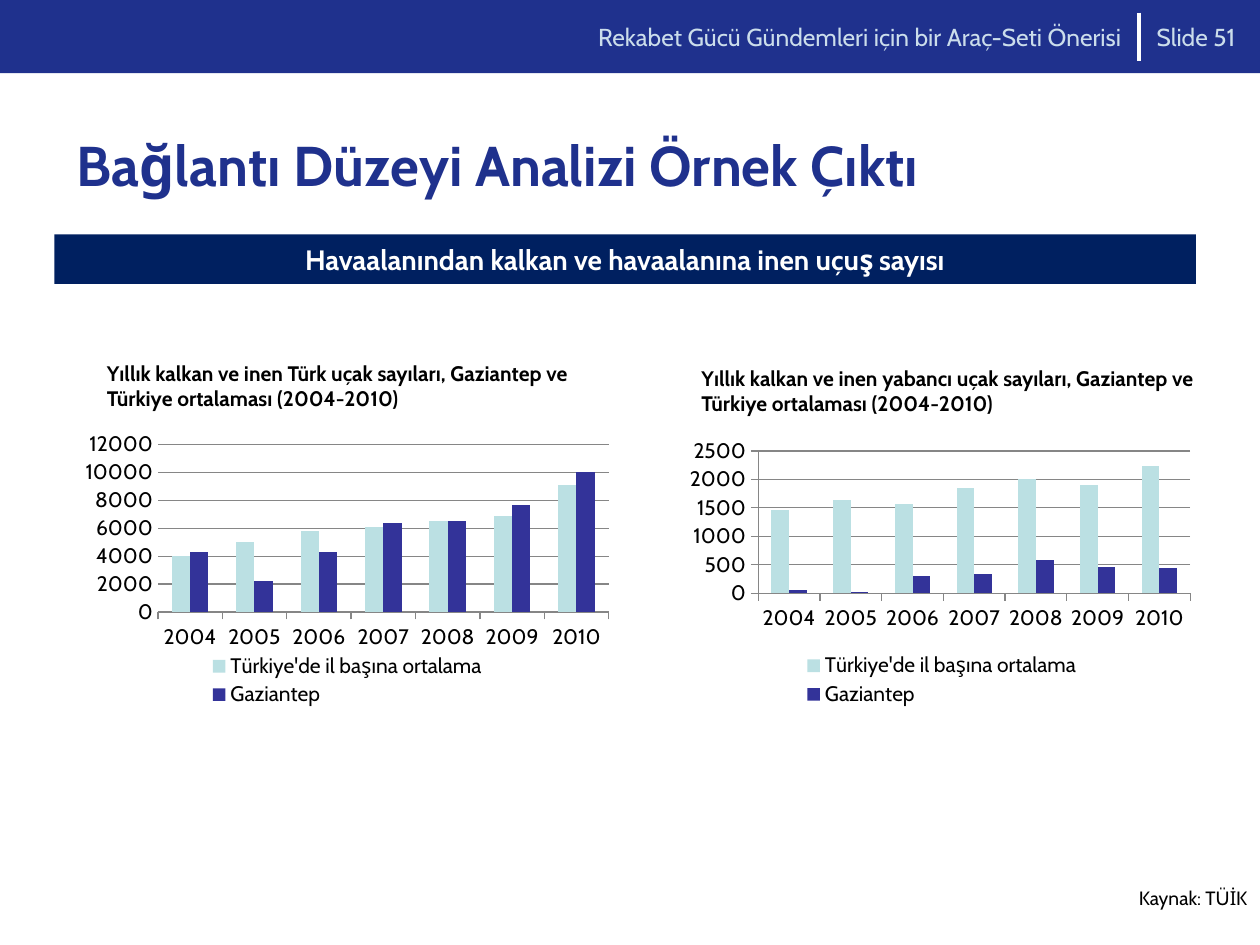
from dataclasses import dataclass

from lxml import etree
from pptx import Presentation
from pptx.chart.data import CategoryChartData
from pptx.dml.color import RGBColor
from pptx.enum.chart import XL_CHART_TYPE, XL_LEGEND_POSITION, XL_TICK_MARK
from pptx.enum.shapes import MSO_CONNECTOR, MSO_SHAPE
from pptx.enum.text import MSO_ANCHOR, MSO_AUTO_SIZE, PP_ALIGN
from pptx.oxml import parse_xml
from pptx.oxml.ns import nsdecls, qn
from pptx.util import Pt

COLUMNS = XL_CHART_TYPE.COLUMN_CLUSTERED
BOTTOM = XL_LEGEND_POSITION.BOTTOM
TICK_NONE, TICK_OUTSIDE = XL_TICK_MARK.NONE, XL_TICK_MARK.OUTSIDE
LEFT, CENTER, RIGHT = PP_ALIGN.LEFT, PP_ALIGN.CENTER, PP_ALIGN.RIGHT
TOP, MIDDLE = MSO_ANCHOR.TOP, MSO_ANCHOR.MIDDLE

FONT = "Cabin"
COLORS = {
    "blue": "1F318D",
    "navy": "002060",
    "pale": "CBDDEB",
    "white": "FFFFFF",
    "black": "000000",
    "grid": "868686",
    "average": "BBE0E3",
    "city": "333399",
}
YEARS = [str(year) for year in range(2004, 2011)]
SERIES = {"Türkiye'de il başına ortalama": "average", "Gaziantep": "city"}

Box = tuple[float, float, float, float]


@dataclass
class Label:
    text: str
    box: Box
    size: float
    color: str = "black"
    bold: bool = False
    align: PP_ALIGN = LEFT
    anchor: MSO_ANCHOR = TOP


@dataclass
class FlightChart:
    box: Box
    plot: Box
    legend: Box
    maximum: int
    step: int
    values: tuple[list[int], list[int]]
    value_line: bool


LABELS = [
    Label("Rekabet Gücü Gündemleri için bir Araç-Seti Önerisi", (149.8, 0, 498.2, 42),
          14, "pale", align=RIGHT, anchor=MIDDLE),
    Label("Slide 51", (653.8, 0, 66.2, 42), 14, "pale", anchor=MIDDLE),
    Label("Bağlantı Düzeyi Analizi Örnek Çıktı", (36.7, 60.5, 671.8, 66.2),
          32, "blue", bold=True, anchor=MIDDLE),
    Label("Yıllık kalkan ve inen Türk uçak sayıları, Gaziantep ve Türkiye ortalaması (2004-2010)",
          (54, 202.3, 289.4, 36), 12, bold=True),
    Label("Yıllık kalkan ve inen yabancı uçak sayıları, Gaziantep ve Türkiye ortalaması (2004-2010)",
          (393.8, 205.5, 311.8, 36), 12, bold=True),
    Label("Kaynak: TÜİK", (371.5, 502.6, 348.5, 20.9), 11, align=RIGHT),
]
BAND = Label("Havaalanından kalkan ve havaalanına inen uçuş sayısı",
             (31, 134, 652.3, 28.3), 16, "white", True, CENTER, MIDDLE)

# Plot and legend boxes are fractions of the chart box
CHARTS = [
    FlightChart((42.5, 241.9, 306, 164.2), (0.156, 0.074, 0.842, 0.583),
                (0.24, 0.79, 0.54, 0.21), 12000, 2000,
                ([4000, 5000, 5800, 6100, 6500, 6900, 9100],
                 [4300, 2200, 4300, 6400, 6500, 7700, 10000]), False),
    FlightChart((388.1, 247.7, 297.4, 158.4), (0.152, 0.063, 0.83, 0.514),
                (0.235, 0.78, 0.54, 0.22), 2500, 500,
                ([1460, 1630, 1570, 1840, 2010, 1900, 2230],
                 [60, 20, 300, 330, 580, 470, 450]), True),
]


def rgb(name: str) -> RGBColor:
    return RGBColor.from_string(COLORS[name])


def points(box: Box) -> list[Pt]:
    return [Pt(length) for length in box]


def write_label(shape, label: Label) -> None:
    frame = shape.text_frame
    frame.text = label.text
    frame.word_wrap = True
    frame.auto_size = MSO_AUTO_SIZE.NONE
    frame.vertical_anchor = label.anchor
    paragraph = frame.paragraphs[0]
    paragraph.alignment = label.align
    font = paragraph.runs[0].font
    font.name, font.size, font.bold = FONT, Pt(label.size), label.bold
    font.color.rgb = rgb(label.color)


def manual_layout(box: Box, inner: bool = False):
    target = '<c:layoutTarget val="inner"/>' if inner else ""
    modes = "".join(f'<c:{axis}Mode val="edge"/>' for axis in "xy")
    sizes = "".join(f'<c:{side} val="{value}"/>' for side, value in zip("xywh", box))
    return parse_xml(f'<c:layout {nsdecls("c")}><c:manualLayout>{target}{modes}{sizes}'
                     "</c:manualLayout></c:layout>")


def gray_line(line) -> None:
    line.color.rgb = rgb("grid")
    line.width = Pt(0.75)


def add_flight_chart(slide, flight: FlightChart) -> None:
    data = CategoryChartData(number_format="General")
    data.categories = YEARS
    for name, values in zip(SERIES, flight.values):
        data.add_series(name, values)
    chart = slide.shapes.add_chart(COLUMNS, *points(flight.box), data).chart
    chart.has_title = False
    chart.font.name, chart.font.size = FONT, Pt(12)
    chart.font.color.rgb = rgb("black")

    # Columns
    plot = chart.plots[0]
    plot.gap_width, plot.overlap, plot.vary_by_categories = 150, 0, False
    for series, color in zip(plot.series, SERIES.values()):
        series.format.fill.solid()
        series.format.fill.fore_color.rgb = rgb(color)

    # Axes
    category_axis, value_axis = chart.category_axis, chart.value_axis
    category_axis.major_tick_mark = TICK_OUTSIDE
    gray_line(category_axis.format.line)
    value_axis.minimum_scale, value_axis.maximum_scale = 0, flight.maximum
    value_axis.major_unit = flight.step
    value_axis.has_major_gridlines = True
    gray_line(value_axis.major_gridlines.format.line)
    if flight.value_line:
        value_axis.major_tick_mark = TICK_OUTSIDE
        gray_line(value_axis.format.line)
    else:
        value_axis.major_tick_mark = TICK_NONE
        value_axis.format.line.fill.background()

    # Legend and fixed layout
    chart.has_legend = True
    legend = chart.legend
    legend.position, legend.include_in_layout = BOTTOM, False
    plot_area = chart.element.find(".//" + qn("c:plotArea"))
    legend_element = chart.element.find(".//" + qn("c:legend"))
    for parent in (plot_area, legend_element):
        for layout in parent.findall(qn("c:layout")):
            parent.remove(layout)
    plot_area.insert(0, manual_layout(flight.plot, inner=True))
    legend_element.find(qn("c:legendPos")).addnext(manual_layout(flight.legend))


def main() -> None:
    presentation = Presentation()
    presentation.slide_width, presentation.slide_height = Pt(720), Pt(540)
    slide = presentation.slides.add_slide(presentation.slide_layouts[5])

    # Header bar with divider
    header = slide.shapes.add_shape(MSO_SHAPE.RECTANGLE, 0, 0, Pt(720), Pt(41.8))
    header.shadow.inherit = False
    header.fill.solid()
    header.fill.fore_color.rgb = rgb("blue")
    header.line.fill.background()
    divider = slide.shapes.add_connector(
        MSO_CONNECTOR.STRAIGHT, Pt(650.9), Pt(7.2), Pt(650.9), Pt(34.6))
    divider.line.color.rgb = rgb("white")
    divider.line.width = Pt(2.5)
    etree.SubElement(divider.element.spPr, qn("a:effectLst"))

    # Title band
    band = slide.shapes.title
    band.left, band.top, band.width, band.height = points(BAND.box)
    band.fill.solid()
    band.fill.fore_color.rgb = rgb("navy")
    write_label(band, BAND)

    # Charts and texts
    for flight in CHARTS:
        add_flight_chart(slide, flight)
    for label in LABELS:
        write_label(slide.shapes.add_textbox(*points(label.box)), label)

    presentation.save("out.pptx")


if __name__ == "__main__":
    main()
